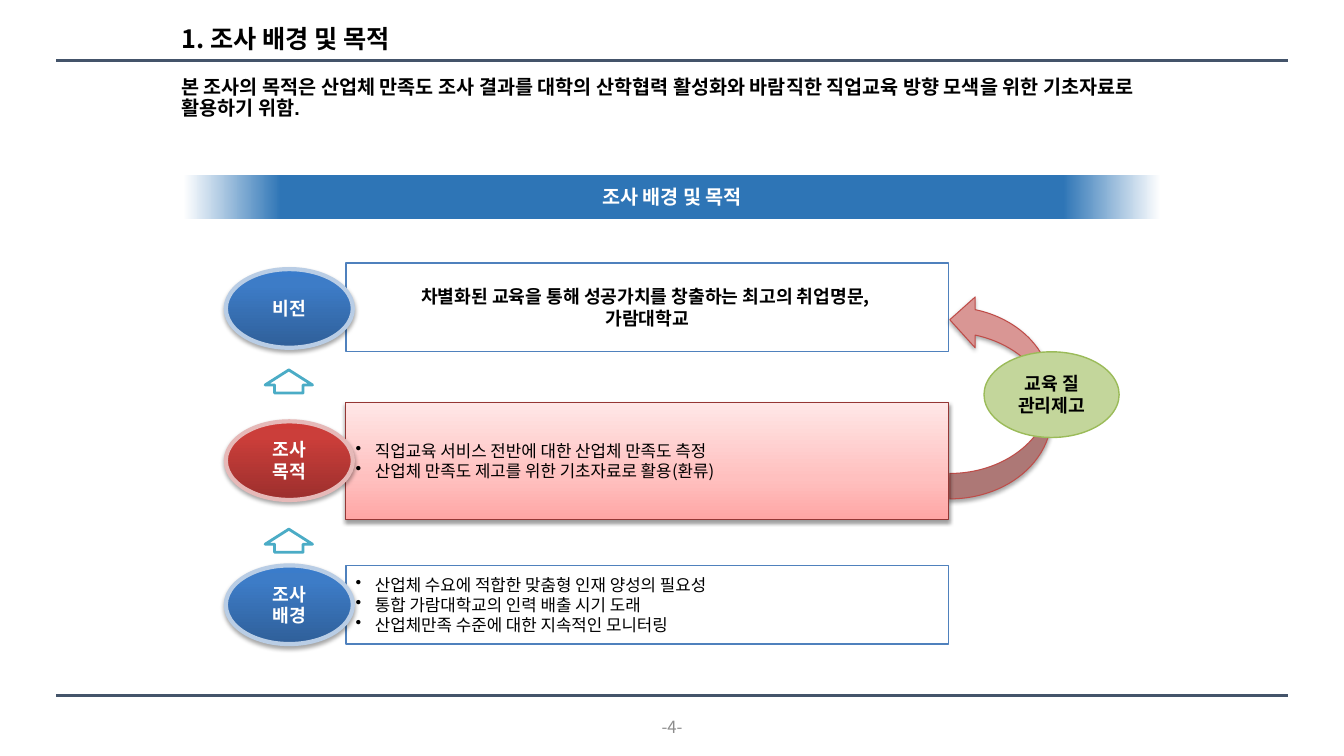
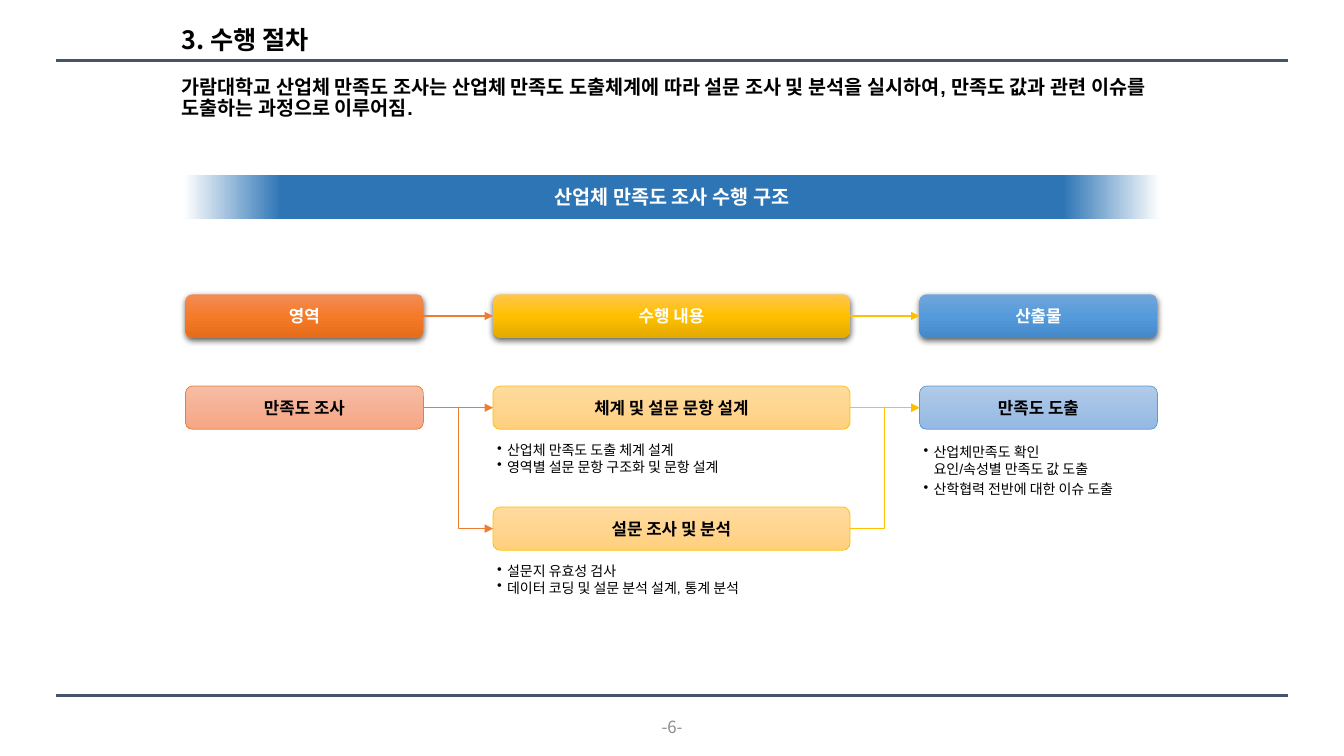
"""Build two slides on the background and the procedure of an employer survey."""
from lxml import etree
from pptx import Presentation, util as u
from pptx.dml.color import RGBColor
from pptx.enum import shapes as kinds, text as t
from pptx.oxml.ns import qn

WIDTH, HEIGHT = 13.33, 7.5
MARGIN = 0.56
SANS, LATIN = "Noto Sans CJK KR", "Arial"
LINE_FACTOR = 1.2

BLACK = RGBColor(0x00, 0x00, 0x00)
WHITE = RGBColor(0xFF, 0xFF, 0xFF)
GREY = RGBColor(0x8C, 0x8C, 0x8C)
NAVY = RGBColor(0x44, 0x54, 0x6A)
BLUE = RGBColor(0x4F, 0x81, 0xBD)
PALE_BLUE = RGBColor(0xB9, 0xCD, 0xE5)
MAROON = RGBColor(0x95, 0x37, 0x35)
PALE_RED = RGBColor(0xE6, 0xB9, 0xB8)
ROSE = RGBColor(0xD9, 0x96, 0x94)
RED = RGBColor(0xBF, 0x4C, 0x48)
PALE_GREEN = RGBColor(0xC3, 0xD6, 0x9B)
GREEN = RGBColor(0x9B, 0xBB, 0x59)
TEAL = RGBColor(0x4B, 0xAC, 0xC6)
ORANGE = RGBColor(0xED, 0x7D, 0x31)
GOLD = RGBColor(0xFF, 0xC0, 0x00)
SKY = RGBColor(0x5B, 0x9B, 0xD5)


def ramp(angle, **stops):
    """Describe a gradient by its angle and stops such as p50="FFC000"."""
    return angle, [(int(key[1:]), RGBColor.from_string(value)) for key, value in stops.items()]


BANNER = ramp(0, p0="FFFFFF", p10="2E75B6", p90="2E75B6", p100="FFFFFF")
BLUE_BADGE = ramp(90, p0="2F5F99", p80="3D7CC7", p100="3A7CCB")
RED_BADGE = ramp(90, p0="9C2F2D", p80="CB3E3A", p100="CE3B37")
PINK_PANEL = ramp(90, p0="FFA6A5", p35="FFC0BF", p100="FFE7E7")
ORANGE_HEAD = ramp(270, p0="F18C57", p50="F67B28", p100="E56C19")
GOLD_HEAD = ramp(270, p0="FFC64B", p50="FFC000", p100="E3AB00")
SKY_HEAD = ramp(270, p0="71A6DB", p50="559BDB", p100="448ACA")
ORANGE_STEP = ramp(270, p0="F7BDA5", p50="F5B196", p100="F8A582")
GOLD_STEP = ramp(270, p0="FFDB9E", p50="FFD590", p100="FFD07C")
SKY_STEP = ramp(270, p0="B1CBE9", p50="A3C1E5", p100="93B9E4")

SOFT = dict(alpha=35, blur=3.1, distance=1.8)
PANEL_SHADOW = dict(alpha=38, blur=3.1, distance=1.6)
DEEP = dict(alpha=63, blur=4.5, distance=1.5)

TITLE = dict(size=18, bold=True, name=SANS)
LEAD = dict(size=14, bold=True, name=LATIN)
STRONG = dict(size=13, bold=True, name=SANS)
STEP = dict(size=12, bold=True, name=SANS)
PLAIN = dict(size=12, bold=False, name=SANS)
DETAIL = dict(size=10, bold=False, name=LATIN)

CENTER, LEFT = t.PP_ALIGN.CENTER, t.PP_ALIGN.LEFT
MIDDLE, TOP = t.MSO_ANCHOR.MIDDLE, t.MSO_ANCHOR.TOP
PRESET = kinds.MSO_SHAPE


def inches(*lengths):
    """Turn numbers into lengths."""
    return [u.Inches(length) for length in lengths]


def add_bullet(paragraph, indent):
    """Give a paragraph a hanging round bullet."""
    props = paragraph._p.get_or_add_pPr()
    props.set("marL", str(u.Inches(indent)))
    props.set("indent", str(-u.Inches(indent)))
    etree.SubElement(props, qn("a:buChar"), char="•")


def write(shape, lines, style, color=BLACK, align=CENTER, anchor=MIDDLE, wrap=True,
          indent=0, leading=LINE_FACTOR, before=0, insets=(0.1, 0.05, 0.1, 0.05)):
    """Fill a shape with evenly formatted paragraphs."""
    frame = shape.text_frame
    sides = ("margin_left", "margin_top", "margin_right", "margin_bottom")
    settings = dict(zip(sides, inches(*insets)), word_wrap=wrap, vertical_anchor=anchor)
    for key, value in settings.items():
        setattr(frame, key, value)
    for number, line in enumerate(lines):
        paragraph = frame.add_paragraph() if number else frame.paragraphs[0]
        paragraph.text = line
        layout = dict(alignment=align, space_before=u.Pt(before),
                      line_spacing=u.Pt(style["size"] * leading))
        for key, value in layout.items():
            setattr(paragraph, key, value)
        if indent:
            add_bullet(paragraph, indent)
        for run in paragraph.runs:
            for key, value in dict(style, size=u.Pt(style["size"])).items():
                setattr(run.font, key, value)
            run.font.color.rgb = color
            etree.SubElement(run._r.get_or_add_rPr(), qn("a:ea"), typeface=SANS)


def add_text(slide, box, lines, style, **options):
    """Add a text box."""
    write(slide.shapes.add_textbox(*inches(*box)), lines, style, **options)


def paint(shape, fill):
    """Fill a shape with one colour or a gradient."""
    if isinstance(fill, RGBColor):
        shape.fill.solid()
        shape.fill.fore_color.rgb = fill
        return
    angle, stops = fill
    shape.fill.gradient()
    shape.fill.gradient_angle = angle
    stop_list = shape._element.spPr.find(".//" + qn("a:gsLst"))
    for stop in list(stop_list):
        stop_list.remove(stop)
    for position, color in stops:
        stop = etree.SubElement(stop_list, qn("a:gs"), pos=str(position * 1000))
        etree.SubElement(stop, qn("a:srgbClr"), val=str(color))


def cast_shadow(shape, alpha, blur, distance):
    """Drop a black shadow straight down."""
    effects = shape._element.spPr.find(qn("a:effectLst"))
    shadow = etree.SubElement(effects, qn("a:outerShdw"), blurRad=str(u.Pt(blur)),
                              dist=str(u.Pt(distance)), dir="5400000", algn="ctr",
                              rotWithShape="0")
    color = etree.SubElement(shadow, qn("a:srgbClr"), val=str(BLACK))
    etree.SubElement(color, qn("a:alpha"), val=str(alpha * 1000))


def add_block(slide, preset, box, fill, edge=None, shadow=None):
    """Add a preset shape with fill, outline (colour, width) and shadow."""
    block = slide.shapes.add_shape(preset, *inches(*box))
    block.shadow.inherit = False
    paint(block, fill)
    if edge:
        block.line.color.rgb, block.line.width = edge[0], u.Pt(edge[1])
    else:
        block.line.fill.background()
    if shadow:
        cast_shadow(block, **shadow)
    return block


def add_line(slide, start, end, color, width=1, arrow=True):
    """Join two points, with an elbow if their heights differ."""
    bend = kinds.MSO_CONNECTOR.STRAIGHT if start[1] == end[1] else kinds.MSO_CONNECTOR.ELBOW
    line = slide.shapes.add_connector(bend, *inches(*start, *end))
    line.line.color.rgb, line.line.width = color, u.Pt(width)
    if arrow:
        etree.SubElement(line.line._get_or_add_ln(), qn("a:tailEnd"), type="triangle")
    etree.SubElement(line._element.spPr, qn("a:effectLst"))


def add_frame(deck, title, title_box, lead, banner, page):
    """Add a slide with rules, title, lead sentence, banner and page number."""
    slide = deck.slides.add_slide(deck.slide_layouts[6])
    for y in (0.6, HEIGHT - 0.6):
        add_line(slide, (MARGIN, y), (WIDTH - MARGIN, y), NAVY, 2, arrow=False)
    add_text(slide, title_box, [title], TITLE, align=LEFT)
    add_text(slide, (1.7, 0.72, 9.92, 0.53), [lead], LEAD, align=LEFT, anchor=TOP, leading=1.08)
    add_text(slide, (6.39, 7.06, 0.55, 0.3), [f"-{page}-"], PLAIN, color=GREY, wrap=False)
    band = add_block(slide, PRESET.RECTANGLE, (1.82, 1.74, 9.69, 0.43), BANNER)
    write(band, [banner], LEAD, color=WHITE)
    return slide


def add_panel(slide, top, height, lines, style, fill=WHITE, edge=(BLUE, 1), shadow=None, **options):
    """Add one wide panel of the purpose ladder."""
    panel = add_block(slide, PRESET.RECTANGLE, (3.43, top, 5.98, height), fill, edge, shadow)
    write(panel, lines, style, **options)


def add_badge(slide, top, lines, fill, rim):
    """Add the oval label of a panel."""
    badge = add_block(slide, PRESET.OVAL, (2.24, top, 1.26, 0.78), fill, (rim, 3), SOFT)
    write(badge, lines, STRONG, color=WHITE)


def build_purpose(deck):
    """Build the slide on background and purpose."""
    slide = add_frame(
        deck, "1. 조사 배경 및 목적", (1.7, 0.2, 2.54, 0.37),
        "본 조사의 목적은 산업체 만족도 조사 결과를 대학의 산학협력 활성화와 바람직한 "
        "직업교육 방향 모색을 위한 기초자료로 활용하기 위함.",
        "조사 배경 및 목적", 4)
    add_panel(slide, 2.61, 0.88,
              ["차별화된 교육을 통해 성공가치를 창출하는 최고의 취업명문, \n가람대학교"], STRONG)
    cycle = add_block(slide, PRESET.CURVED_LEFT_ARROW, (9.42, 2.92, 1.01, 2.03), ROSE,
                      (RED, 0.75), SOFT)
    cycle._element.spPr.find(qn("a:xfrm")).set("flipV", "1")
    quality = add_block(slide, PRESET.OVAL, (9.76, 3.49, 1.34, 0.85), PALE_GREEN, (GREEN, 1))
    write(quality, ["교육 질 관리제고"], STRONG)
    bullets = dict(align=LEFT, indent=0.19)
    add_panel(slide, 5.61, 0.78, ["산업체 수요에 적합한 맞춤형 인재 양성의 필요성",
                                  "통합 가람대학교의 인력 배출 시기 도래",
                                  "산업체만족 수준에 대한 지속적인 모니터링"], PLAIN, **bullets)
    add_panel(slide, 3.99, 1.16, ["직업교육 서비스 전반에 대한 산업체 만족도 측정",
                                  "산업체 만족도 제고를 위한 기초자료로 활용(환류)"], PLAIN,
              PINK_PANEL, (MAROON, 0.75), PANEL_SHADOW, **bullets)
    add_badge(slide, 2.67, ["비전"], BLUE_BADGE, PALE_BLUE)
    add_badge(slide, 4.18, ["조사", "목적"], RED_BADGE, PALE_RED)
    add_badge(slide, 5.61, ["조사", "배경"], BLUE_BADGE, PALE_BLUE)
    for top in (3.67, 5.25):
        rise = add_block(slide, PRESET.UP_ARROW, (2.63, top, 0.47, 0.23), WHITE, (TEAL, 2))
        rise.adjustments[0], rise.adjustments[1] = 0.6, 0.65


def build_procedure(deck):
    """Build the slide on the survey procedure."""
    slide = add_frame(
        deck, "3. 수행 절차", (1.7, 0.21, 1.6, 0.37),
        "가람대학교 산업체 만족도 조사는 산업체 만족도 도출체계에 따라 설문 조사 및 분석을 "
        "실시하여, 만족도 값과 관련 이슈를 도출하는 과정으로 이루어짐.",
        "산업체 만족도 조사 수행 구조", 6)
    area, work, output = (1.84, 2.36), (4.89, 3.54), (9.12, 2.36)
    head_row, first_row, second_row = 2.92, 3.83, 5.03
    bar = 0.43
    steps = [
        (area, head_row, "영역", ORANGE_HEAD, None),
        (work, head_row, "수행 내용", GOLD_HEAD, None),
        (output, head_row, "산출물", SKY_HEAD, None),
        (area, first_row, "만족도 조사", ORANGE_STEP, ORANGE),
        (work, first_row, "체계 및 설문 문항 설계", GOLD_STEP, GOLD),
        (work, second_row, "설문 조사 및 분석", GOLD_STEP, GOLD),
        (output, first_row, "만족도 도출", SKY_STEP, SKY),
    ]
    for (left, width), top, label, fill, edge in steps:
        step = add_block(slide, PRESET.ROUNDED_RECTANGLE, (left, top, width, bar), fill,
                         edge and (edge, 0.5), None if edge else DEEP)
        write(step, [label], STEP, color=BLACK if edge else WHITE)

    bullets = dict(align=LEFT, anchor=TOP, indent=0.1)
    details = [
        (first_row, ["산업체 만족도 도출 체계 설계", "영역별 설문 문항 구조화 및 문항 설계"]),
        (second_row, ["설문지 유효성 검사", "데이터 코딩 및 설문 분석 설계, 통계 분석"]),
    ]
    for top, lines in details:
        add_text(slide, (work[0], top + bar, work[1], 0.53), lines, DETAIL,
                 insets=(0.04, 0.12, 0.04, 0.04), **bullets)
    add_text(slide, (output[0], 4.36, output[1], 0.63),
             ["산업체만족도 확인\n요인/속성별 만족도 값 도출", "산학협력 전반에 대한 이슈 도출"],
             DETAIL, before=2.5, insets=(0.04,) * 4, **bullets)

    for source, target, color in ((area, work, ORANGE), (work, output, GOLD)):
        start, end = sum(source), target[0]
        for row in (head_row, first_row):
            add_line(slide, (start, row + bar / 2), (end, row + bar / 2), color)
        rows = (first_row, second_row) if source is area else (second_row, first_row)
        add_line(slide, (start, rows[0] + bar / 2), (end, rows[1] + bar / 2), color)


def main():
    """Build and save the deck."""
    deck = Presentation()
    deck.slide_width, deck.slide_height = inches(WIDTH, HEIGHT)
    build_purpose(deck)
    build_procedure(deck)
    deck.save("out.pptx")


if __name__ == "__main__":
    main()
